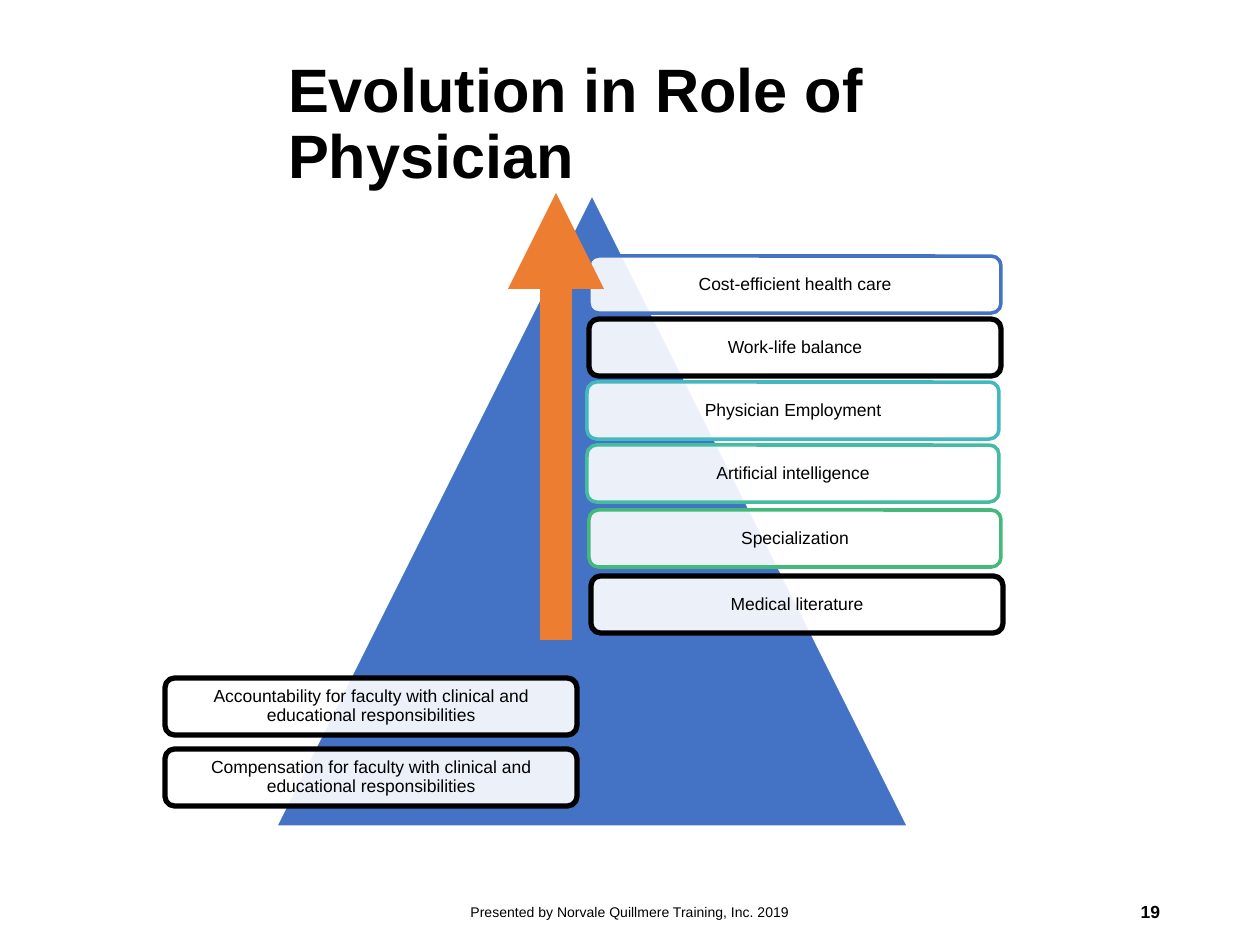
import dataclasses
import typing

import lxml.etree
import pptx
import pptx.dml.color
import pptx.enum.shapes
import pptx.enum.text
import pptx.oxml.ns
import pptx.util

PX_PER_INCH = 126
COLORS = {
    "white": "FFFFFF",
    "black": "000000",
    "blue": "4472C4",
    "cyan": "43B8BF",
    "teal": "43BCA0",
    "green": "44B97B",
    "orange": "ED7D31",
}
ALIGN = pptx.enum.text.PP_ALIGN
SHAPE = pptx.enum.shapes.MSO_SHAPE


@dataclasses.dataclass(frozen=True)
class Box:
    left: int
    top: int
    width: int
    height: int


@dataclasses.dataclass(frozen=True)
class Factor:
    label: str
    left: int
    top: int
    outline: str
    weight: int


TITLE_BOX = Box(275, 34, 900, 183)
PYRAMID_BOX = Box(275, 193, 634, 634)
FOOTER_BOX = Box(417, 887, 426, 50)
NUMBER_BOX = Box(890, 887, 283, 50)
FACTOR_WIDTH, FACTOR_HEIGHT = 412, 57
ARROW_X, ARROW_BASE, ARROW_TIP = 556, 640, 193

FACTORS = [
    Factor("Cost-efficient health care", 589, 256, "blue", 2),
    Factor("Work-life balance", 589, 319, "black", 3),
    Factor("Physician Employment", 587, 382, "cyan", 2),
    Factor("Artificial intelligence", 587, 445, "teal", 2),
    Factor("Specialization", 589, 510, "green", 2),
    Factor("Accountability for faculty with clinical and educational responsibilities", 165, 678, "black", 3),
    Factor("Compensation for faculty with clinical and educational responsibilities", 165, 749, "black", 3),
    Factor("Medical literature", 591, 576, "black", 3),
]


def px(length: int) -> pptx.util.Emu:
    return pptx.util.Emu(round(length * 914400 / PX_PER_INCH))


def place(box: Box) -> tuple:
    return tuple(px(length) for length in dataclasses.astuple(box))


def rgb(name: str) -> pptx.dml.color.RGBColor:
    return pptx.dml.color.RGBColor.from_string(COLORS[name])


def apply(target: typing.Any, values: dict) -> None:
    for name, value in values.items():
        setattr(target, name, value)


def write(shape: typing.Any, text: str, size: int, align: ALIGN, bold: bool = False,
          inset: tuple = (13, 6), spacing: float = 1.0) -> None:
    across, down = (px(length) for length in inset)
    frame = shape.text_frame
    apply(frame, {
        "text": text,
        "word_wrap": True,
        "auto_size": pptx.enum.text.MSO_AUTO_SIZE.NONE,
        "vertical_anchor": pptx.enum.text.MSO_ANCHOR.MIDDLE,
        "margin_left": across,
        "margin_right": across,
        "margin_top": down,
        "margin_bottom": down,
    })
    paragraph = frame.paragraphs[0]
    apply(paragraph, {"alignment": align, "line_spacing": spacing})
    font = paragraph.runs[0].font
    apply(font, {"name": "Arial", "size": pptx.util.Pt(size), "bold": bold})
    font.color.rgb = rgb("black")


def add_outlined(slide: typing.Any, kind: SHAPE, box: Box, fill: str, outline: str, weight: int) -> typing.Any:
    shape = slide.shapes.add_shape(kind, *place(box))
    shape.shadow.inherit = False
    shape.fill.solid()
    shape.fill.fore_color.rgb = rgb(fill)
    shape.line.color.rgb = rgb(outline)
    shape.line.width = pptx.util.Pt(weight)
    return shape


def add_factor(slide: typing.Any, factor: Factor) -> None:
    box = Box(factor.left, factor.top, FACTOR_WIDTH, FACTOR_HEIGHT)
    panel = add_outlined(slide, SHAPE.ROUNDED_RECTANGLE, box, "white", factor.outline, factor.weight)
    fill_color = panel._element.spPr.find(".//" + pptx.oxml.ns.qn("a:srgbClr"))
    lxml.etree.SubElement(fill_color, pptx.oxml.ns.qn("a:alpha"), val="90000")
    write(panel, factor.label, 10, ALIGN.CENTER, inset=(8, 5), spacing=0.9)


def add_rising_arrow(slide: typing.Any) -> None:
    arrow = slide.shapes.add_connector(
        pptx.enum.shapes.MSO_CONNECTOR.STRAIGHT,
        px(ARROW_X), px(ARROW_BASE), px(ARROW_X), px(ARROW_TIP))
    arrow.line.color.rgb = rgb("orange")
    arrow.line.width = pptx.util.Pt(18.25)
    properties = arrow._element.spPr
    stroke = properties.find(pptx.oxml.ns.qn("a:ln"))
    lxml.etree.SubElement(stroke, pptx.oxml.ns.qn("a:tailEnd"), type="triangle")
    lxml.etree.SubElement(properties, pptx.oxml.ns.qn("a:effectLst"))


def main() -> None:
    deck = pptx.Presentation()
    apply(deck, {"slide_width": px(1260), "slide_height": px(945)})
    slide = deck.slides.add_slide(deck.slide_layouts[5])

    title = slide.shapes.title
    apply(title, dict(zip(("left", "top", "width", "height"), place(TITLE_BOX))))
    write(title, "Evolution in Role of Physician", 35, ALIGN.LEFT, bold=True, spacing=0.9)

    footer = slide.shapes.add_textbox(*place(FOOTER_BOX))
    write(footer, "Presented by Norvale Quillmere Training, Inc. 2019", 8, ALIGN.CENTER)
    page_number = slide.shapes.add_textbox(*place(NUMBER_BOX))
    write(page_number, "19", 10, ALIGN.RIGHT, bold=True)

    add_outlined(slide, SHAPE.ISOSCELES_TRIANGLE, PYRAMID_BOX, "blue", "white", 2)
    for factor in FACTORS:
        add_factor(slide, factor)
    add_rising_arrow(slide)

    deck.save("out.pptx")


if __name__ == "__main__":
    main()
